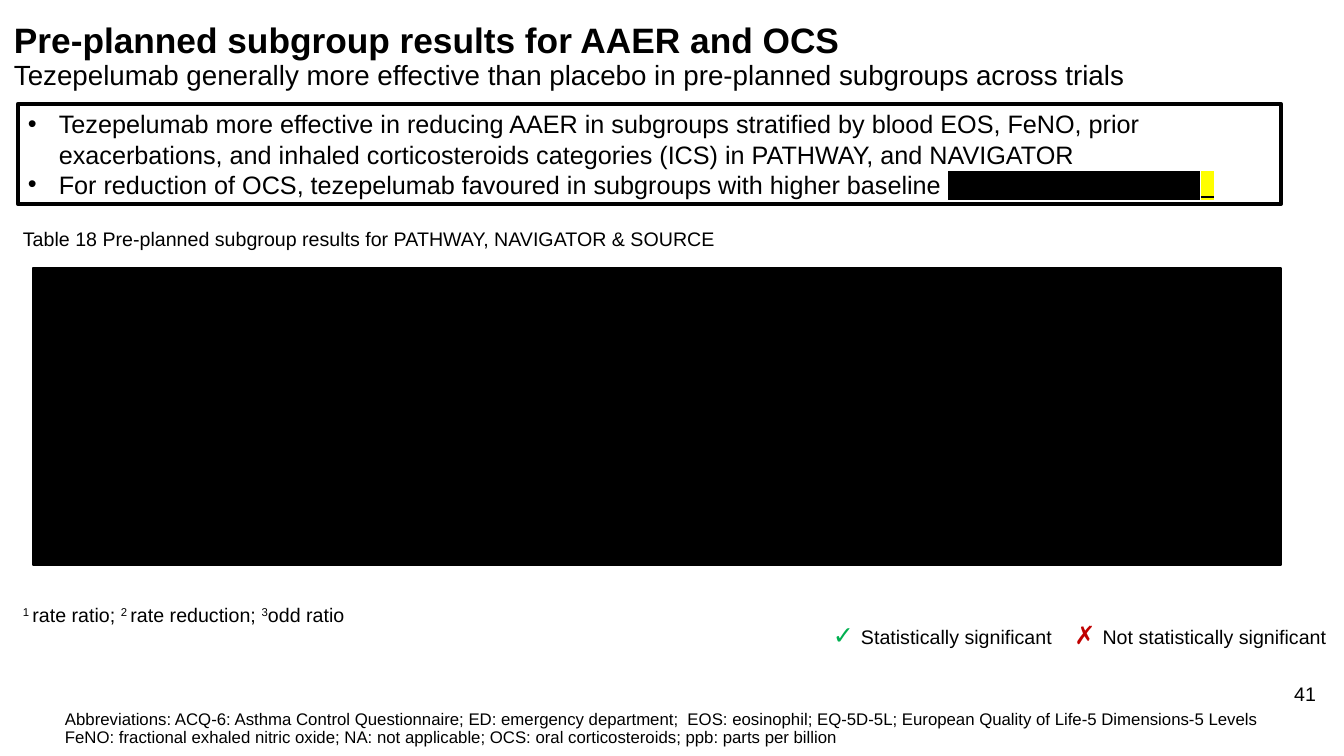
from lxml.etree import SubElement
from pptx import Presentation
from pptx.dml.color import RGBColor
from pptx.enum.shapes import MSO_SHAPE
from pptx.enum.text import MSO_ANCHOR, PP_ALIGN
from pptx.oxml.ns import qn
from pptx.util import Pt

SCALE = 914400 / 100.8


def px(size):
    """Turn px into EMU."""
    return round(size * SCALE)


def tint(code):
    """Turn a hex string into a colour."""
    return RGBColor.from_string(code)


class Page:
    """Holds the style and the current slide."""

    face = "Arial"
    ink = "000000"

    def __init__(self, deck):
        """Add a blank slide to the deck."""
        self.slide = deck.slides.add_slide(deck.slide_layouts[6])

    def para(self, para, runs, size, align=PP_ALIGN.LEFT, space=1.0, bullet=False):
        """Fill a paragraph from strings or (text, style) pairs."""
        if bullet:
            props = para._p.get_or_add_pPr()
            props.set("marL", str(px(31)))
            props.set("indent", str(-px(31)))
            SubElement(props, qn("a:buFont"), typeface=self.face)
            SubElement(props, qn("a:buChar"), char="•")
        para.alignment = align
        para.line_spacing = space
        para.font.name = self.face
        para.font.size = Pt(size)
        para.font.color.rgb = tint(self.ink)
        for item in runs:
            words, style = (item, {}) if isinstance(item, str) else item
            if words == "\n":
                para.add_line_break()
            else:
                self.run(para, words, **style)

    def run(self, para, words, size=None, bold=None, hue=None, line=None, mark=None, rise=None):
        """Add a run with its own style."""
        run = para.add_run()
        run.text = words
        run.font.bold = bold
        run.font.underline = line
        if size:
            run.font.size = Pt(size)
        if hue:
            run.font.color.rgb = tint(hue)
        props = run._r.get_or_add_rPr()
        if mark:
            light = SubElement(props, qn("a:highlight"))
            SubElement(light, qn("a:srgbClr"), val=mark)
        if rise:
            props.set("baseline", str(rise * 1000))

    def text(self, box, runs, size, wrap=True, **style):
        """Add a text box of one paragraph."""
        frame = self.slide.shapes.add_textbox(*map(px, box)).text_frame
        frame.word_wrap = wrap
        self.para(frame.paragraphs[0], runs, size, **style)

    def rect(self, box, width, fill=None):
        """Add a rectangle and return its text frame."""
        shape = self.slide.shapes.add_shape(MSO_SHAPE.RECTANGLE, *map(px, box))
        shape.shadow.inherit = False
        if fill:
            shape.fill.solid()
            shape.fill.fore_color.rgb = tint(fill)
        else:
            shape.fill.background()
        shape.line.color.rgb = tint(self.ink)
        shape.line.width = Pt(width)
        return shape.text_frame

    def list(self, box, items, size):
        """Add a framed bullet list."""
        frame = self.rect(box, 3)
        frame.word_wrap = True
        frame.vertical_anchor = MSO_ANCHOR.MIDDLE
        for spot, runs in enumerate(items):
            para = frame.add_paragraph() if spot else frame.paragraphs[0]
            self.para(para, runs, size, bullet=True)


def main():
    """Build the slide."""
    deck = Presentation()
    deck.slide_width, deck.slide_height = px(1344), px(756)
    page = Page(deck)
    page.text((1275, 677, 51, 40), ["41"], 14, align=PP_ALIGN.RIGHT)
    page.text((4, 18, 1311, 45), [
        ("Pre-planned subgroup results for AAER and OCS ", {"size": 25.2, "bold": True}),
        "\n",
        "Tezepelumab generally more effective than placebo in pre-planned subgroups across trials",
    ], 19.8, space=0.9)
    page.text((55, 706, 1234, 50), [
        "Abbreviations: ACQ-6: Asthma Control Questionnaire; ED: emergency department;  "
        "EOS: eosinophil; EQ-5D-5L; European Quality of Life-5 Dimensions-5 Levels  "
        "FeNO: fractional exhaled nitric oxide; NA: not applicable; "
        "OCS: oral corticosteroids; ppb: parts per billion",
    ], 12, space=0.9)
    page.list((18, 104, 1263, 100), [
        ["Tezepelumab more effective in reducing AAER in subgroups stratified by blood EOS, "
         "FeNO, prior exacerbations, and inhaled corticosteroids categories (ICS) in PATHWAY, "
         "and NAVIGATOR"],
        ["For reduction of OCS, tezepelumab favoured in subgroups with higher baseline ",
         ("XXXXXXXXXXXXXXX", {"line": True, "mark": "000000"}),
         ("  ", {"line": True, "mark": "FFFF00"})],
    ], 18)
    page.text((13, 222, 721, 34),
              ["Table 18 Pre-planned subgroup results for PATHWAY, NAVIGATOR & SOURCE"],
              14, wrap=False)
    for left, width, sign, hue, words in (
        (812, 261, "✓ ", "00B050", "Statistically significant"),
        (1050, 294, " ✗ ", "C00000", "Not statistically significant"),
    ):
        page.text((left, 614, width, 40), [(sign, {"size": 18, "hue": hue}), words],
                  14, align=PP_ALIGN.CENTER)
    high = {"rise": 30}
    page.text((13, 598, 353, 34), [
        ("1 ", high), "rate ratio; ", ("2 ", high), "rate reduction; ", ("3", high), "odd ratio",
    ], 14, wrap=False)
    page.rect((33, 268, 1248, 297), 1, "000000")
    deck.save("out.pptx")


if __name__ == "__main__":
    main()
